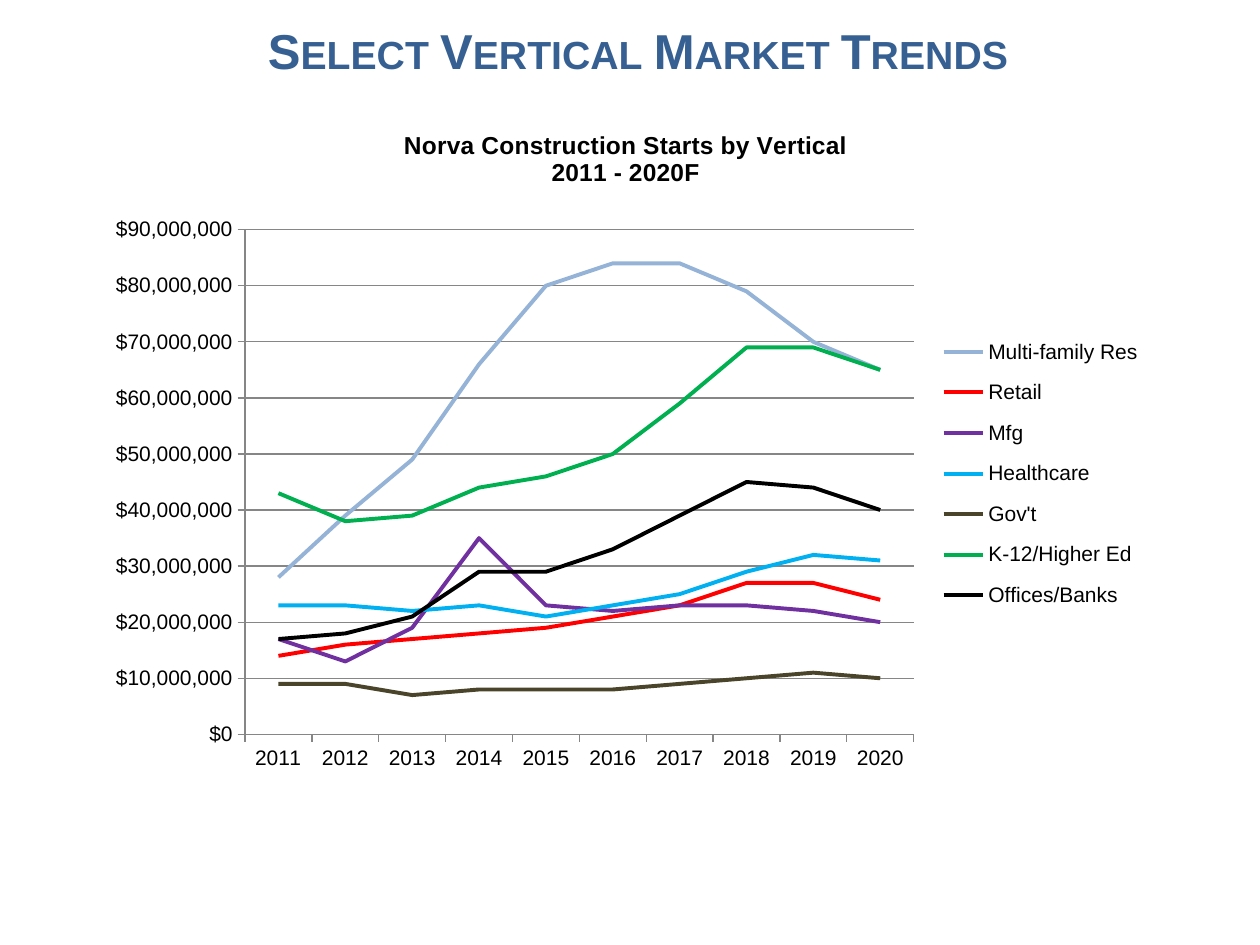
from lxml import etree
from pptx import Presentation
from pptx.chart.data import CategoryChartData
from pptx.dml.color import RGBColor
from pptx.enum.chart import XL_CHART_TYPE, XL_LEGEND_POSITION, XL_TICK_MARK
from pptx.enum.text import MSO_ANCHOR, PP_ALIGN
from pptx.oxml.ns import qn
from pptx.util import Pt

LINE = XL_CHART_TYPE.LINE
RIGHT = XL_LEGEND_POSITION.RIGHT
OUTSIDE = XL_TICK_MARK.OUTSIDE
CENTER = PP_ALIGN.CENTER
MIDDLE = MSO_ANCHOR.MIDDLE

HEADLINE = "Select Vertical Market Trends"
CHART_TITLE = ["Norva Construction Starts by Vertical", "2011 - 2020F"]
YEARS = [str(year) for year in range(2011, 2021)]
MILLION = 1_000_000
STARTS_IN_MILLIONS = [
    ("Multi-family Res", "95B3D7", [28, 39, 49, 66, 80, 84, 84, 79, 70, 65]),
    ("Retail", "FF0000", [14, 16, 17, 18, 19, 21, 23, 27, 27, 24]),
    ("Mfg", "7030A0", [17, 13, 19, 35, 23, 22, 23, 23, 22, 20]),
    ("Healthcare", "00B0F0", [23, 23, 22, 23, 21, 23, 25, 29, 32, 31]),
    ("Gov't", "4A452A", [9, 9, 7, 8, 8, 8, 9, 10, 11, 10]),
    ("K-12/Higher Ed", "00B050", [43, 38, 39, 44, 46, 50, 59, 69, 69, 65]),
    ("Offices/Banks", "000000", [17, 18, 21, 29, 29, 33, 39, 45, 44, 40]),
]
AXIS_GRAY = "868686"


def color(hex_value):
    return RGBColor.from_string(hex_value)


def style_font(font, size, hex_value, bold=False):
    font.name = "Arial"
    font.size = Pt(size)
    font.bold = bold
    font.color.rgb = color(hex_value)


def style_line(line, hex_value, width):
    line.color.rgb = color(hex_value)
    line.width = Pt(width)


def place(part, inner=False, **fractions):
    for old_layout in part.findall(qn("c:layout")):
        part.remove(old_layout)
    layout = etree.Element(qn("c:layout"))
    manual = etree.SubElement(layout, qn("c:manualLayout"))
    settings = [("layoutTarget", "inner")] if inner else []
    settings += [("xMode", "edge"), ("yMode", "edge")]
    settings += [(key, str(value)) for key, value in fractions.items()]
    for tag, value in settings:
        etree.SubElement(manual, qn("c:" + tag)).set("val", value)
    overlay = part.find(qn("c:overlay"))
    if overlay is None:
        part.insert(0, layout)
    else:
        overlay.addprevious(layout)


def add_headline(slide):
    box = slide.shapes.add_textbox(Pt(0), Pt(12.24), Pt(720), Pt(32.4))
    frame = box.text_frame
    frame.word_wrap = True
    frame.vertical_anchor = MIDDLE
    frame.margin_left = frame.margin_right = Pt(0)
    frame.margin_top = frame.margin_bottom = Pt(0)
    paragraph = frame.paragraphs[0]
    paragraph.alignment = CENTER
    run = paragraph.add_run()
    run.text = HEADLINE
    run._r.get_or_add_rPr().set("cap", "small")
    paragraph._p.get_or_add_pPr().set("marL", str(Pt(9.36)))
    style_font(paragraph.font, 28, "376092", bold=True)


def add_starts_chart(slide):
    data = CategoryChartData(number_format='"$"#,##0')
    data.categories = YEARS
    for name, _, starts in STARTS_IN_MILLIONS:
        data.add_series(name, [value * MILLION for value in starts])
    chart = slide.shapes.add_chart(
        LINE, Pt(36), Pt(59.76), Pt(642.24), Pt(401.76), data
    ).chart
    style_font(chart.font, 10, "000000")

    chart.has_title = True
    title_frame = chart.chart_title.text_frame
    title_frame.text = "\n".join(CHART_TITLE)
    for paragraph in title_frame.paragraphs:
        style_font(paragraph.font, 14, "000000", bold=True)
    place(chart.chart_title._element, x=0.3, y=0.03)

    chart.has_legend = True
    chart.legend.position = RIGHT
    chart.legend.include_in_layout = False
    style_font(chart.legend.font, 12, "000000")
    place(chart.legend._element, x=0.77, y=0.31, w=0.2, h=0.43)
    plot_area = chart._chartSpace.chart.plotArea
    place(plot_area, inner=True, x=0.162, y=0.178, w=0.595, h=0.718)

    for axis in (chart.category_axis, chart.value_axis):
        axis.major_tick_mark = OUTSIDE
        style_font(axis.tick_labels.font, 12, "000000")
        style_line(axis.format.line, AXIS_GRAY, 0.75)
    value_axis = chart.value_axis
    value_axis.minimum_scale = 0
    value_axis.maximum_scale = 90 * MILLION
    value_axis.major_unit = 10 * MILLION
    value_axis.tick_labels.number_format = '"$"#,##0'
    value_axis.tick_labels.number_format_is_linked = False
    value_axis.has_major_gridlines = True
    style_line(value_axis.major_gridlines.format.line, AXIS_GRAY, 0.75)

    plot = chart.plots[0]
    plot.vary_by_categories = False
    for series, (_, hex_value, _) in zip(plot.series, STARTS_IN_MILLIONS):
        series.smooth = False
        style_line(series.format.line, hex_value, 2.25)


def main():
    deck = Presentation()
    deck.slide_width, deck.slide_height = Pt(720), Pt(540)
    slide = deck.slides.add_slide(deck.slide_layouts[6])
    add_headline(slide)
    add_starts_chart(slide)
    deck.save("out.pptx")


if __name__ == "__main__":
    main()
